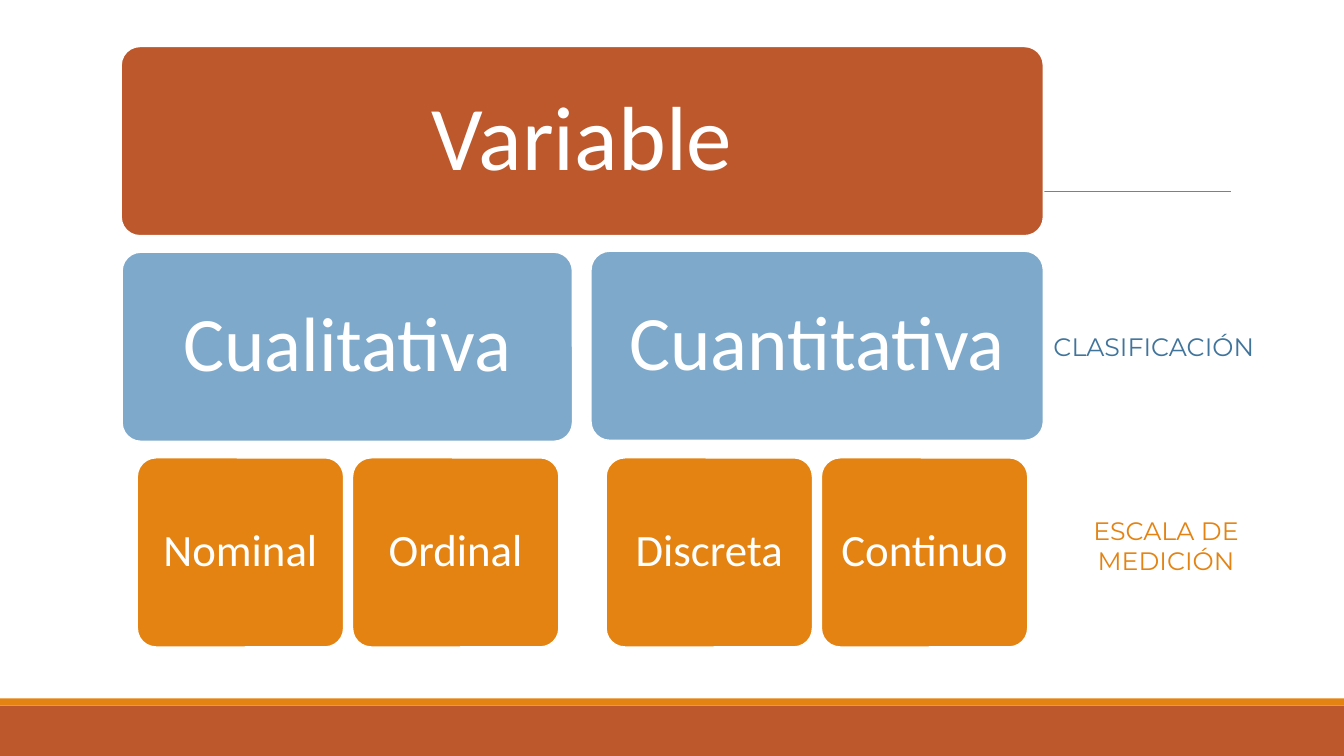
from lxml.etree import SubElement
from pptx import Presentation
from pptx.dml.color import RGBColor
from pptx.enum.shapes import MSO_CONNECTOR, MSO_SHAPE
from pptx.enum.text import MSO_ANCHOR, MSO_AUTO_SIZE, PP_ALIGN
from pptx.oxml.ns import qn
from pptx.util import Inches, Pt

COLORS = {
    "rust": "BD582C",
    "orange": "E48312",
    "sky": "7EA9CA",
    "blue": "40749B",
    "gray": "808080",
    "white": "FFFFFF",
}
WIDTH, HEIGHT = 13.33, 7.5
CARD_HEIGHT = 1.88
LEAF_WIDTH, LEAF_STEP, LEAF_TOP = 2.05, 2.135, 4.54


def add_block(page, kind, area, color):
    block = page.shapes.add_shape(kind, *[Inches(length) for length in area])
    block.shadow.inherit = False
    block.fill.solid()
    block.fill.fore_color.rgb = RGBColor.from_string(COLORS[color])
    block.line.fill.background()
    return block


def write_text(frame, text, font, size, color, align):
    frame.text = text
    for para in frame.paragraphs:
        para.alignment = align
        for span in para.runs:
            span.font.name = font
            span.font.size = Pt(size)
            span.font.color.rgb = RGBColor.from_string(COLORS[color])


deck = Presentation()
deck.slide_width, deck.slide_height = Inches(WIDTH), Inches(HEIGHT)
page = deck.slides.add_slide(deck.slide_layouts[6])

add_block(page, MSO_SHAPE.RECTANGLE, (0, 7, WIDTH, 0.5), "rust")
add_block(page, MSO_SHAPE.RECTANGLE, (0, 6.93, WIDTH, 0.07), "orange")

rule = page.shapes.add_connector(
    MSO_CONNECTOR.STRAIGHT, Inches(1.31), Inches(1.9), Inches(12.21), Inches(1.9)
)
rule.line.color.rgb = RGBColor.from_string(COLORS["gray"])
rule.line.width = Pt(0.5)
SubElement(rule._element.spPr, qn("a:effectLst"))

cards = [("Variable", 1.2, 0.46, 9.15, "rust", 65, 0.27)]
branches = [
    ("Cualitativa", 1.21, 2.5, 4.47, ("Nominal", "Ordinal")),
    ("Cuantitativa", 5.86, 2.49, 4.49, ("Discreta", "Continuo")),
]
for name, left, top, width, leaves in branches:
    cards.append((name, left, top, width, "sky", 55, 0.22))
    for column, leaf in enumerate(leaves):
        leaf_left = left + 0.15 + column * LEAF_STEP
        cards.append((leaf, leaf_left, LEAF_TOP, LEAF_WIDTH, "orange", 32, 0.12))

for name, left, top, width, color, size, inset in cards:
    area = (left, top, width, CARD_HEIGHT)
    card = add_block(page, MSO_SHAPE.ROUNDED_RECTANGLE, area, color)
    card.adjustments[0] = 0.1
    card.line.color.rgb = RGBColor.from_string(COLORS["white"])
    card.line.width = Pt(1.25)
    frame = card.text_frame
    frame.word_wrap = True
    frame.vertical_anchor = MSO_ANCHOR.MIDDLE
    frame.margin_left = frame.margin_right = Inches(inset)
    frame.margin_top = frame.margin_bottom = Inches(inset)
    write_text(frame, name, "Calibri", size, "white", PP_ALIGN.CENTER)
    frame.paragraphs[0].line_spacing = 0.9

labels = [
    ("CLASIFICACIÓN", (10.35, 3.24, 2.41, 0.4), "blue", PP_ALIGN.LEFT),
    ("ESCALA DE\nMEDICIÓN", (10.67, 5.06, 1.79, 0.71), "orange", PP_ALIGN.CENTER),
]
for text, area, color, align in labels:
    box = page.shapes.add_textbox(*[Inches(length) for length in area])
    box.text_frame.word_wrap = False
    box.text_frame.auto_size = MSO_AUTO_SIZE.SHAPE_TO_FIT_TEXT
    write_text(box.text_frame, text, "Montserrat", 18, color, align)

deck.save("out.pptx")
